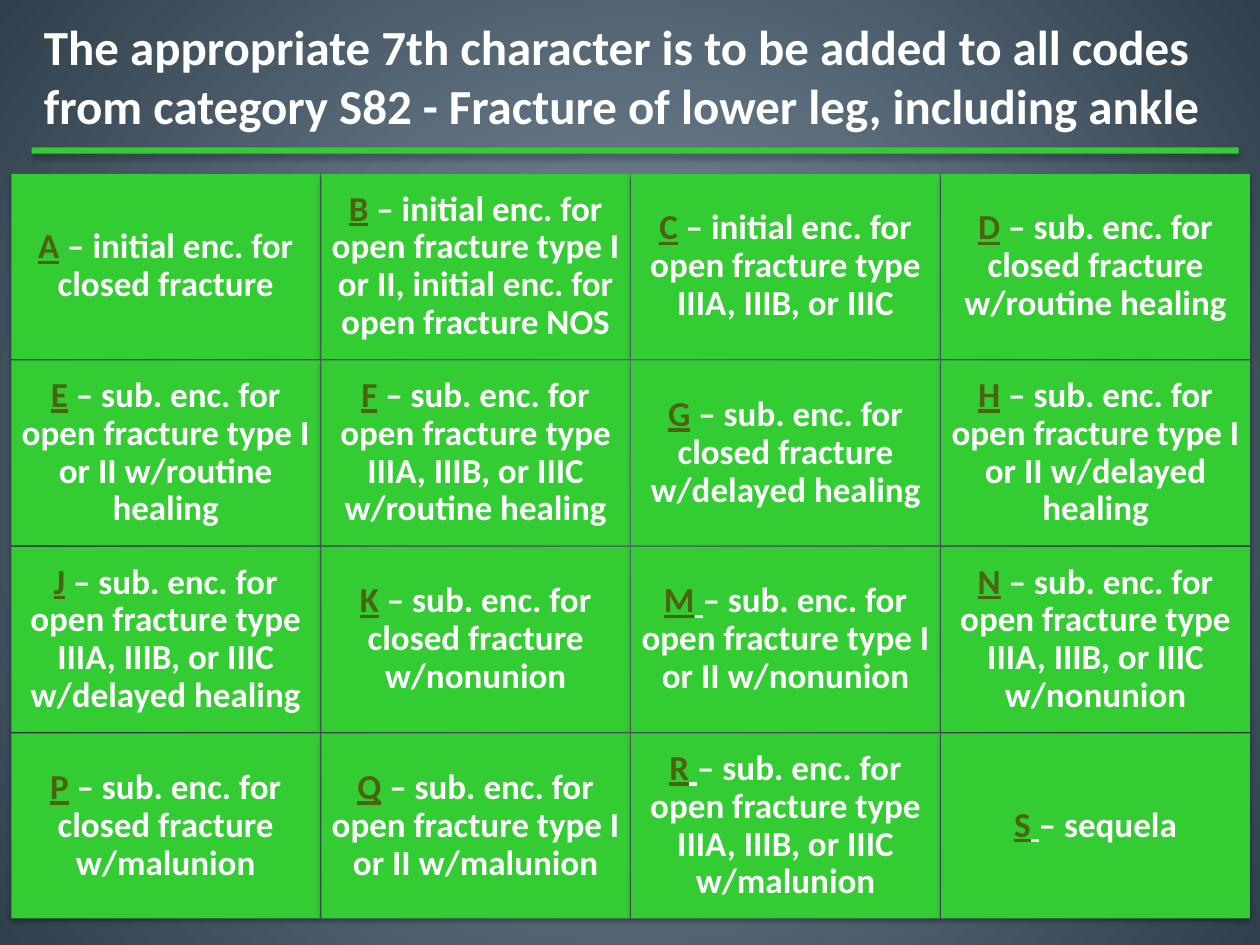
from dataclasses import dataclass

from lxml.etree import SubElement
from pptx import Presentation
from pptx.dml.color import RGBColor
from pptx.enum.shapes import MSO_SHAPE as Preset
from pptx.enum.text import MSO_ANCHOR as Anchor, PP_ALIGN as Align
from pptx.oxml.ns import qn
from pptx.shapes.autoshape import Shape
from pptx.slide import Slide
from pptx.util import Inches, Pt


@dataclass(frozen=True)
class Theme:
    green: RGBColor = RGBColor.from_string("33CC33")
    olive: RGBColor = RGBColor.from_string("4C6312")
    white: RGBColor = RGBColor.from_string("FFFFFF")
    glow: RGBColor = RGBColor.from_string("8699A9")
    edge: RGBColor = RGBColor.from_string("2F3F4B")
    font: str = "Calibri"
    title_size: Pt = Pt(28)
    tile_size: Pt = Pt(20)


@dataclass(frozen=True)
class Code:
    letter: str
    meaning: str
    underlined_gap: bool = False


THEME = Theme()
COLUMNS = 4
TITLE = (
    "The appropriate 7th character is to be added to all codes "
    "from category S82 - Fracture of lower leg, including ankle"
)
CODES = [
    Code("A", "initial enc. for closed fracture"),
    Code("B", "initial enc. for open fracture type I or II, initial enc. for open fracture NOS"),
    Code("C", "initial enc. for open fracture type IIIA, IIIB, or IIIC"),
    Code("D", "sub. enc. for closed fracture w/routine healing"),
    Code("E", "sub. enc. for open fracture type I or II w/routine healing"),
    Code("F", "sub. enc. for open fracture type IIIA, IIIB, or IIIC w/routine healing"),
    Code("G", "sub. enc. for closed fracture w/delayed healing"),
    Code("H", "sub. enc. for open fracture type I or II w/delayed healing"),
    Code("J", "sub. enc. for open fracture type IIIA, IIIB, or IIIC w/delayed healing"),
    Code("K", "sub. enc. for closed fracture w/nonunion"),
    Code("M", "sub. enc. for open fracture type I or II w/nonunion", True),
    Code("N", "sub. enc. for open fracture type IIIA, IIIB, or IIIC w/nonunion"),
    Code("P", "sub. enc. for closed fracture w/malunion"),
    Code("Q", "sub. enc. for open fracture type I or II w/malunion"),
    Code("R", "sub. enc. for open fracture type IIIA, IIIB, or IIIC w/malunion", True),
    Code("S", "sequela", True),
]


def paint_background(slide: Slide) -> None:
    """Fill the background with a gradient that radiates from the centre."""
    fill = slide.background.fill
    fill.gradient()
    for stop, color in zip(fill.gradient_stops, (THEME.glow, THEME.edge)):
        stop.color.rgb = color
    gradient = slide.element.find(".//" + qn("a:gradFill"))
    gradient.remove(gradient.find(qn("a:lin")))
    circle = SubElement(gradient, qn("a:path"), path="circle")
    SubElement(circle, qn("a:fillToRect"), l="50000", t="50000", r="50000", b="50000")


def add_green_box(slide: Slide, left: float, top: float, width: float, height: float) -> Shape:
    """Add a borderless green rectangle with a soft shadow below it."""
    box = slide.shapes.add_shape(
        Preset.RECTANGLE, Inches(left), Inches(top), Inches(width), Inches(height)
    )
    box.fill.solid()
    box.fill.fore_color.rgb = THEME.green
    box.line.fill.background()
    box.shadow.inherit = False
    effects = box.element.spPr.find(qn("a:effectLst"))
    shadow = SubElement(
        effects, qn("a:outerShdw"), blurRad=str(Pt(3.1)), dist=str(Pt(1.8)),
        dir="5400000", rotWithShape="0",
    )
    color = SubElement(shadow, qn("a:srgbClr"), val="000000")
    SubElement(color, qn("a:alpha"), val="35000")
    return box


def add_tile(slide: Slide, code: Code, left: float, top: float) -> None:
    """Add one tile with an underlined code letter and its meaning."""
    frame = add_green_box(slide, left, top, 2.45, 1.47).text_frame
    frame.word_wrap = True
    frame.vertical_anchor = Anchor.MIDDLE
    frame.margin_left = frame.margin_right = Inches(0.08)
    frame.margin_top = frame.margin_bottom = Inches(0.08)
    para = frame.paragraphs[0]
    para.alignment = Align.CENTER
    para.line_spacing = 0.9
    para.space_after = Pt(7)
    para.font.name, para.font.size, para.font.bold = THEME.font, THEME.tile_size, True
    for text, color, underlined in (
        (code.letter, THEME.olive, True),
        (" ", THEME.white, code.underlined_gap),
        (f"– {code.meaning}", THEME.white, False),
    ):
        span = para.add_run()
        span.text = text
        span.font.color.rgb = color
        span.font.underline = underlined


def add_title(slide: Slide) -> None:
    """Add the heading above the green rule."""
    box = slide.shapes.add_textbox(Inches(0.25), Inches(0.08), Inches(9.58), Inches(1.04))
    box.text_frame.word_wrap = True
    para = box.text_frame.paragraphs[0]
    para.text = TITLE
    para.font.name, para.font.size, para.font.bold = THEME.font, THEME.title_size, True
    para.font.color.rgb = THEME.white


def main() -> None:
    """Build and save the slide."""
    deck = Presentation()
    deck.slide_width, deck.slide_height = Inches(10), Inches(7.5)
    slide = deck.slides.add_slide(deck.slide_layouts[6])
    paint_background(slide)
    for index, code in enumerate(CODES):
        row, column = divmod(index, COLUMNS)
        add_tile(slide, code, 0.09 + 2.46 * column, 1.38 + 1.48 * row)
    add_green_box(slide, 0.25, 1.17, 9.58, 0.05)
    add_title(slide)
    deck.save("out.pptx")


if __name__ == "__main__":
    main()
